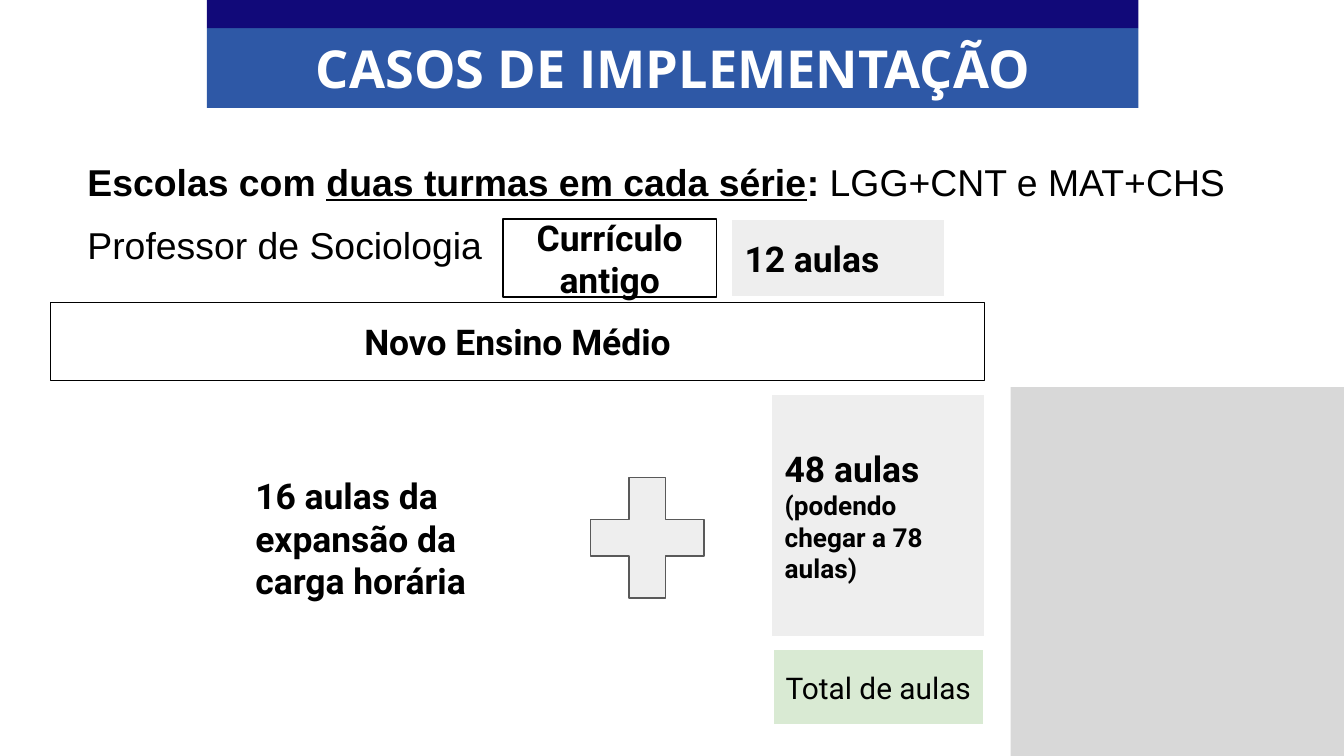
from lxml import etree
from pptx import Presentation
from pptx.dml.color import RGBColor
from pptx.enum.shapes import MSO_SHAPE
from pptx.enum.text import MSO_ANCHOR, MSO_AUTO_SIZE, PP_ALIGN
from pptx.oxml.ns import qn
from pptx.util import Pt

RECTANGLE, PLUS = MSO_SHAPE.RECTANGLE, MSO_SHAPE.MATH_PLUS
LEFT, CENTER = PP_ALIGN.LEFT, PP_ALIGN.CENTER
TOP, MIDDLE = MSO_ANCHOR.TOP, MSO_ANCHOR.MIDDLE

BLACK = RGBColor(0x00, 0x00, 0x00)
WHITE = RGBColor(0xFF, 0xFF, 0xFF)
NAVY = RGBColor(0x11, 0x09, 0x79)
BLUE = RGBColor(0x2E, 0x58, 0xA6)
GREEN = RGBColor(0xD9, 0xEA, 0xD3)
LIGHT_GRAY = RGBColor(0xEE, 0xEE, 0xEE)
GRAY = RGBColor(0xBF, 0xBF, 0xBF)
DARK_GRAY = RGBColor(0x59, 0x59, 0x59)

# Shared grid, in points
BANNER_LEFT, BANNER_WIDTH = 110.9, 499
CELL_WIDTH, CELL_HEIGHT = 114.5, 41.8
TOTAL_LEFT = 413.3
CURRICULUM_TOP = 117.4


def place(shape, left, top, width, height):
    shape.left, shape.top = Pt(left), Pt(top)
    shape.width, shape.height = Pt(width), Pt(height)


def set_frame(shape, anchor=MIDDLE, side=7.2, edge=7.2):
    frame = shape.text_frame
    frame.word_wrap = True
    frame.auto_size = MSO_AUTO_SIZE.NONE
    frame.vertical_anchor = anchor
    frame.margin_left = frame.margin_right = Pt(side)
    frame.margin_top = frame.margin_bottom = Pt(edge)
    return frame


def add_run(paragraph, text, size=19, font="Roboto", color=BLACK, bold=True, underline=False):
    run = paragraph.add_run()
    run.text = text
    run.font.size = Pt(size)
    run.font.name = font
    run.font.color.rgb = color
    run.font.bold = bold
    run.font.underline = underline


def add_shape(slide, bounds, fill=None, line=None, line_width=0.75, kind=RECTANGLE):
    shape = slide.shapes.add_shape(kind, *map(Pt, bounds))
    shape.shadow.inherit = False
    if fill is None:
        shape.fill.background()
    else:
        shape.fill.solid()
        shape.fill.fore_color.rgb = fill
    if line is None:
        shape.line.fill.background()
    else:
        shape.line.color.rgb = line
        shape.line.width = Pt(line_width)
    return shape


def add_box(slide, bounds, lines, fill=None, line=WHITE, line_width=0.75, align=LEFT):
    """Add a rectangle whose lines are (text, run format) pairs."""
    frame = set_frame(add_shape(slide, bounds, fill, line, line_width))
    for index, (text, text_format) in enumerate(lines):
        paragraph = frame.add_paragraph() if index else frame.paragraphs[0]
        paragraph.alignment = align
        add_run(paragraph, text, **text_format)


def add_banner(slide):
    add_shape(slide, (BANNER_LEFT, 15.1, BANNER_WIDTH, 42.8), BLUE)
    add_shape(slide, (BANNER_LEFT, 0, BANNER_WIDTH, 15.1), NAVY)
    title = slide.shapes.title
    slide.shapes.element.append(title.element)  # bring the title in front of the banner
    place(title, BANNER_LEFT, 15.8, BANNER_WIDTH, 41)
    paragraph = set_frame(title, TOP, edge=3.6).paragraphs[0]
    paragraph.alignment = CENTER
    add_run(paragraph, "CASOS DE IMPLEMENTAÇÃO", 28, "Open Sans", WHITE)


def fill_body(body):
    place(body, 39.6, 77.8, 686.9, 73.4)
    frame = set_frame(body, TOP)
    schools, teacher = frame.paragraphs[0], frame.add_paragraph()
    for paragraph, before, after in ((schools, 0, 0), (teacher, 10, 10)):
        paragraph.space_before, paragraph.space_after = Pt(before), Pt(after)
        properties = paragraph._p.get_or_add_pPr()
        properties.set("marL", "0")
        properties.set("indent", "0")
        etree.SubElement(properties, qn("a:buNone"))
    add_run(schools, "Escolas com ", 20, "Arial")
    add_run(schools, "duas turmas em cada série", 20, "Arial", underline=True)
    add_run(schools, ": ", 20, "Arial")
    add_run(schools, "LGG+CNT e MAT+CHS", 20, "Arial", bold=False)
    add_run(teacher, "Professor de Sociologia", 20, "Arial", bold=False)


def add_side_panel(slide):
    panel = add_shape(slide, (541.4, 207.4, 178.6, 202.3), GRAY)
    color = panel.fill._xPr.find(qn("a:solidFill"))[0]
    etree.SubElement(color, qn("a:alpha"), val="60000")


def main():
    presentation = Presentation()
    presentation.slide_width, presentation.slide_height = Pt(720), Pt(405)
    slide = presentation.slides.add_slide(presentation.slide_layouts[1])

    # Heading and introduction
    fill_body(slide.placeholders[1])
    add_banner(slide)
    add_side_panel(slide)

    # New curriculum
    add_box(slide, (27.2, 162.1, 500.2, CELL_HEIGHT),
            [("Novo Ensino Médio", {})], WHITE, BLACK, align=CENTER)
    add_box(slide, (TOTAL_LEFT, 347.2, CELL_WIDTH, CELL_HEIGHT),
            [("Total de aulas", {"size": 16, "bold": False})],
            GREEN, line_width=2.25, align=CENTER)
    add_box(slide, (TOTAL_LEFT, 211.3, CELL_WIDTH, 129.6),
            [("48 aulas", {}), ("(podendo chegar a 78 aulas)", {"size": 14})], LIGHT_GRAY)
    plus = add_shape(slide, (305.3, 244.3, 82.8, 87.8), LIGHT_GRAY, DARK_GRAY, kind=PLUS)
    plus.adjustments[0] = 0.235
    add_box(slide, (129.7, 251.6, 150.5, 73.4),
            [("16 aulas da expansão da carga horária", {})])

    # Old curriculum
    add_box(slide, (269.4, CURRICULUM_TOP, CELL_WIDTH, CELL_HEIGHT),
            [("Currículo antigo", {})], WHITE, BLACK, align=CENTER)
    add_box(slide, (391.8, CURRICULUM_TOP, CELL_WIDTH, CELL_HEIGHT),
            [("12 aulas", {})], LIGHT_GRAY)

    presentation.save("out.pptx")


if __name__ == "__main__":
    main()
